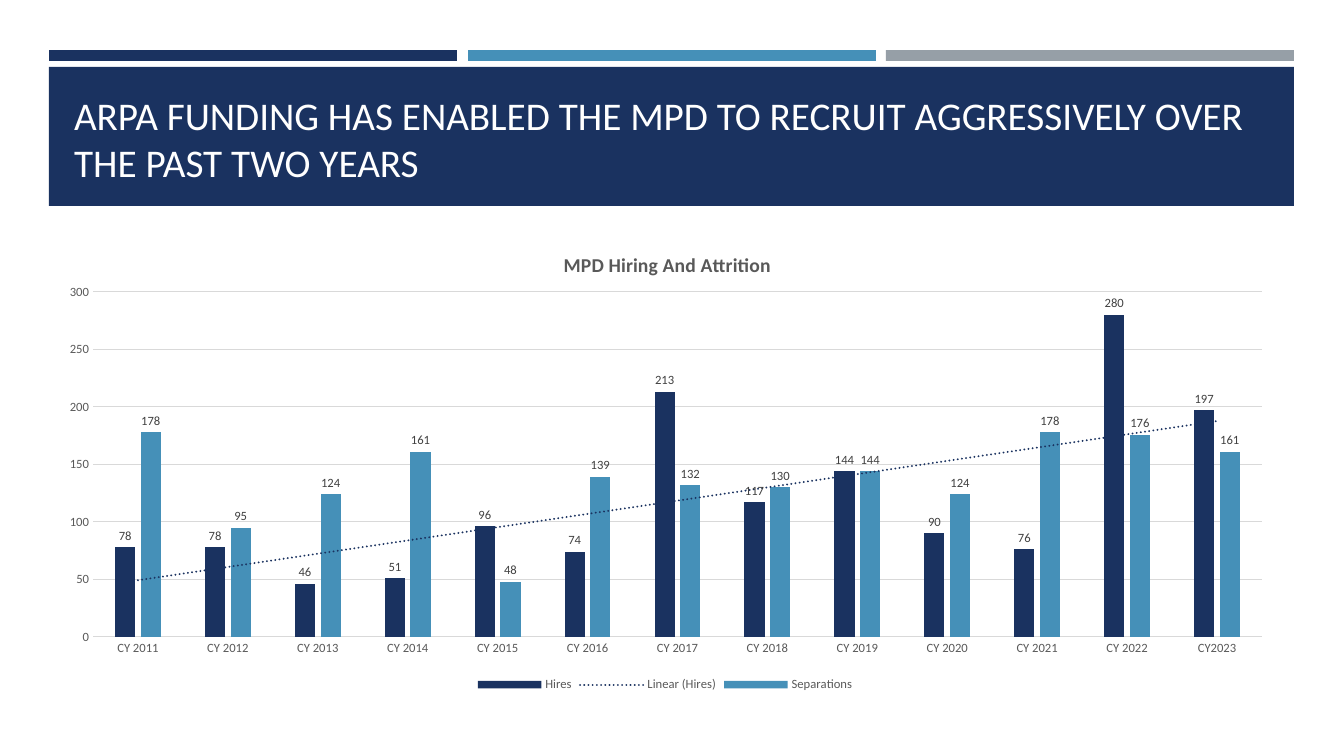
from lxml.etree import SubElement
from pptx import Presentation
from pptx.chart.data import CategoryChartData
from pptx.dml.color import RGBColor
from pptx.enum.chart import XL_CHART_TYPE as ChartType, XL_LEGEND_POSITION as LegendPos
from pptx.enum.chart import XL_LABEL_POSITION as LabelPos, XL_TICK_MARK as Tick
from pptx.enum.shapes import MSO_SHAPE as Preset
from pptx.enum.text import MSO_ANCHOR as Anchor, PP_ALIGN as Align
from pptx.oxml import parse_xml
from pptx.oxml.ns import nsdecls, qn
from pptx.util import Pt

PX = 914400 / 100.8
NAVY, BLUE, GRAY = "1A3260", "4590B8", "969FA7"
TEXT, RULE = "595959", "D9D9D9"
CHART_BOX = (44, 227, 1242, 469)


def box(*lengths):
    return [round(length * PX) for length in lengths]


def style(font, size, color, bold=False):
    for key, value in {"name": "Calibri", "size": Pt(size), "bold": bold}.items():
        setattr(font, key, value)
    font.color.rgb = RGBColor.from_string(color)


deck = Presentation()
deck.slide_width, deck.slide_height = box(1344, 756)
slide = deck.slides.add_slide(deck.slide_layouts[5])

bands = [
    ((49, 50, 408, 11), NAVY),
    ((468, 50, 408, 11), BLUE),
    ((886, 50, 408, 11), GRAY),
    ((49, 67, 1245, 139), NAVY),
]
for place, color in bands:
    band = slide.shapes.add_shape(Preset.RECTANGLE, *box(*place))
    band.shadow.inherit = False
    band.fill.solid()
    band.fill.fore_color.rgb = RGBColor.from_string(color)
    band.line.fill.background()

headline = slide.shapes.title
headline.left, headline.top, headline.width, headline.height = box(64, 81, 1216, 109)
slide.shapes._spTree.append(headline._element)
headline.text_frame.text = (
    "ARPA FUNDING HAS ENABLED THE MPD TO RECRUIT AGGRESSIVELY OVER THE PAST TWO YEARS"
)
headline.text_frame.word_wrap = True
headline.text_frame.vertical_anchor = Anchor.BOTTOM
headline.text_frame.paragraphs[0].alignment = Align.LEFT
style(headline.text_frame.paragraphs[0].runs[0].font, 28, "FFFFFF")

staffing = CategoryChartData()
staffing.categories = [f"CY {year}" for year in range(2011, 2023)] + ["CY2023"]
staffing.add_series("Hires", [78, 78, 46, 51, 96, 74, 213, 117, 144, 90, 76, 280, 197])
staffing.add_series(
    "Separations", [178, 95, 124, 161, 48, 139, 132, 130, 144, 124, 178, 176, 161]
)
chart = slide.shapes.add_chart(
    ChartType.COLUMN_CLUSTERED, *box(*CHART_BOX), staffing
).chart
style(chart.font, 10, "000000")

chart.has_title = True
chart.chart_title.text_frame.text = "MPD Hiring And Attrition"
style(chart.chart_title.text_frame.paragraphs[0].runs[0].font, 14, TEXT, True)

chart.has_legend = True
chart.legend.position = LegendPos.BOTTOM
chart.legend.include_in_layout = False
style(chart.legend.font, 9, TEXT)

years, counts = chart.category_axis, chart.value_axis
for axis in (years, counts):
    axis.major_tick_mark = axis.minor_tick_mark = Tick.NONE
    style(axis.tick_labels.font, 9, TEXT)
for key, value in {"minimum_scale": 0, "maximum_scale": 300, "major_unit": 50}.items():
    setattr(counts, key, value)
counts.format.line.fill.background()
for rule in (years.format.line, counts.major_gridlines.format.line):
    rule.color.rgb = RGBColor.from_string(RULE)
    rule.width = Pt(0.75)

columns = chart.plots[0]
columns.gap_width, columns.overlap = 219, -27
columns.vary_by_categories = False
for series, color in zip(columns.series, (NAVY, BLUE)):
    series.format.fill.solid()
    series.format.fill.fore_color.rgb = RGBColor.from_string(color)
    series.invert_if_negative = False
    labels = series.data_labels
    labels.show_value = True
    labels.position = LabelPos.OUTSIDE_END
    style(labels.font, 9, "404040")

trend = parse_xml(
    f'<c:trendline {nsdecls("c", "a")}><c:spPr><a:ln w="{Pt(1.5)}" cap="rnd">'
    f'<a:solidFill><a:srgbClr val="{NAVY}"/></a:solidFill><a:prstDash val="sysDot"/>'
    '</a:ln></c:spPr><c:trendlineType val="linear"/>'
    '<c:dispRSqr val="0"/><c:dispEq val="0"/></c:trendline>'
)
columns.series[0]._element.find(qn("c:cat")).addprevious(trend)

plot_area = chart._chartSpace.chart.plotArea
title_element = chart.chart_title._element
left, top, width, height = CHART_BOX
layouts = [
    (plot_area, {
        "layoutTarget": "inner", "xMode": "edge", "yMode": "edge",
        "x": (93 - left) / width, "y": (292 - top) / height,
        "w": 1169 / width, "h": 345 / height,
    }),
    (title_element, {
        "xMode": "edge", "yMode": "edge",
        "x": (560 - left) / width, "y": (248 - top) / height,
    }),
]
for owner, settings in layouts:
    layout = owner.find(qn("c:layout"))
    if layout is None:
        layout = parse_xml(f'<c:layout {nsdecls("c")}/>')
        if owner is plot_area:
            owner.insert(0, layout)
        else:
            owner.find(qn("c:tx")).addnext(layout)
    manual = SubElement(layout, qn("c:manualLayout"))
    for key, value in settings.items():
        SubElement(manual, qn(f"c:{key}")).set("val", str(value))

deck.save("out.pptx")
